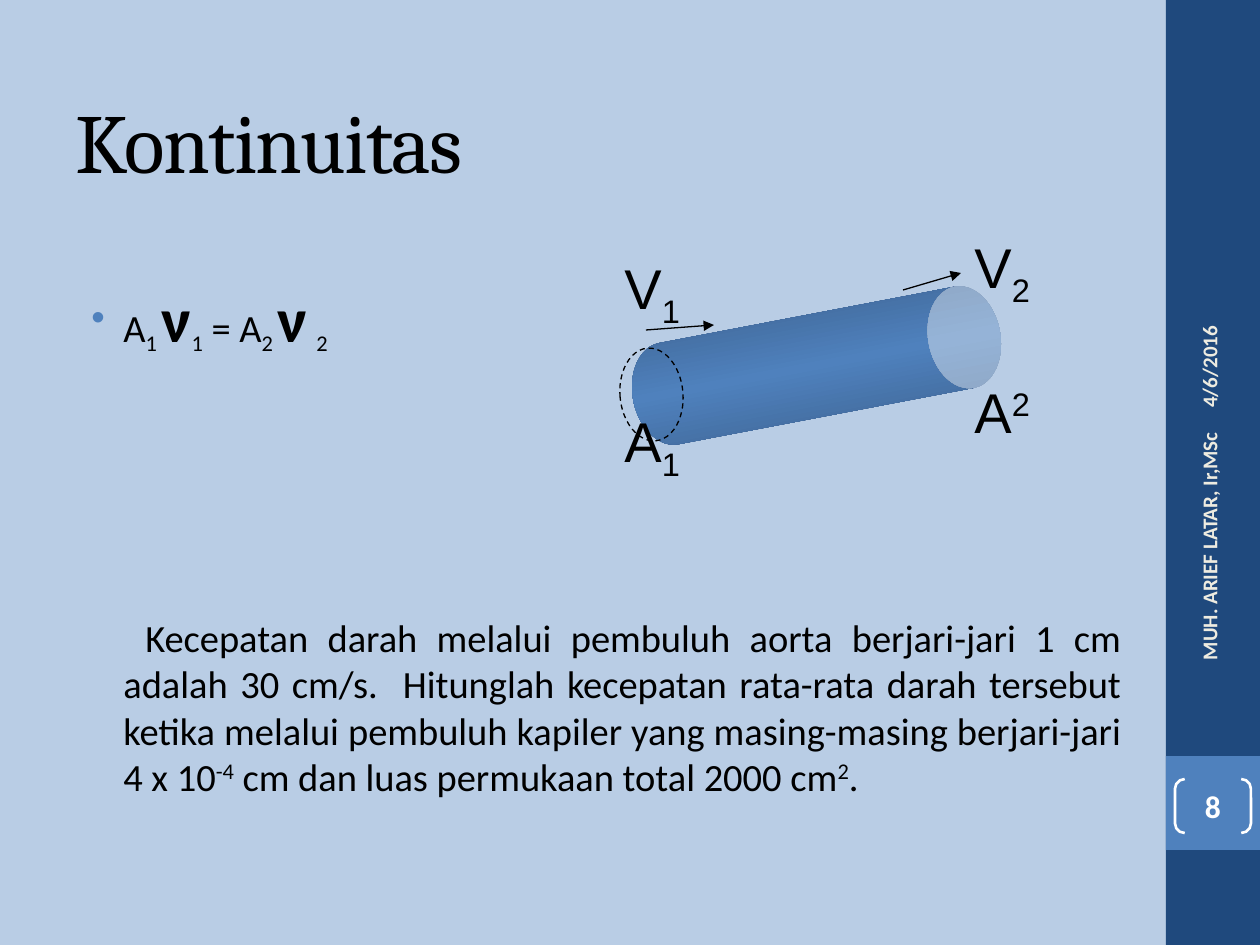
from copy import deepcopy
from lxml.etree import SubElement
from pptx import Presentation
from pptx.dml.color import RGBColor
from pptx.enum.dml import MSO_LINE
from pptx.enum.shapes import MSO_CONNECTOR, MSO_SHAPE
from pptx.enum.text import MSO_ANCHOR, PP_ALIGN
from pptx.oxml.ns import qn
from pptx.util import Pt

PX = 914400 / 126
HUES = {"back": "B9CDE5", "navy": "1F497D", "blue": "4F81BD", "shade": "395C87",
        "cream": "EEECE1", "white": "FFFFFF", "black": "000000"}
RGB = {name: RGBColor.from_string(hue) for name, hue in HUES.items()}


def place(*nums):
    return [round(n * PX) for n in nums]


def write(para, text, size, face="Calibri", hue="black", bold=False, base=0):
    run = para.add_run()
    run.text = text
    font = run.font
    font.size, font.name, font.bold = Pt(size), face, bold
    font.color.rgb = RGB[hue]
    if base:
        font._element.set("baseline", str(base * 1000))
    return run


deck = Presentation()
deck.slide_width, deck.slide_height = place(1260, 945)
slide = deck.slides.add_slide(deck.slide_layouts[5])
slide.background.fill.solid()
slide.background.fill.fore_color.rgb = RGB["back"]
shapes = slide.shapes

for top, high, hue in [(0, 945, "navy"), (756, 94, "blue")]:
    band = shapes.add_shape(MSO_SHAPE.RECTANGLE, *place(1166, top, 94, high))
    band.shadow.inherit = False
    band.fill.solid()
    band.fill.fore_color.rgb = RGB[hue]
    band.line.fill.background()

title = shapes.title
title.left, title.top, title.width, title.height = place(63, 84, 462, 111)
title.text_frame.vertical_anchor = MSO_ANCHOR.MIDDLE
para = title.text_frame.paragraphs[0]
para.alignment = PP_ALIGN.LEFT
run = write(para, "Kontinuitas", 48, "Cambria")
run.font._element.set("spc", "-100")

box = shapes.add_textbox(*place(63, 273, 500, 100))
box.text_frame.word_wrap = True
para = box.text_frame.paragraphs[0]
props = para._p.get_or_add_pPr()
left, hang = place(48, -32)
props.set("marL", str(left))
props.set("indent", str(hang))
SubElement(SubElement(props, qn("a:buClr")), qn("a:srgbClr"), val=HUES["blue"])
SubElement(props, qn("a:buFont"), typeface="Arial")
SubElement(props, qn("a:buChar"), char="•")
for text, size, bold, base in [
        ("A", 22, False, 0), ("1 ", 22, False, -25), ("ν", 36, True, 0),
        ("1", 22, False, -25), (" = A", 22, False, 0), ("2 ", 22, False, -25),
        ("ν", 36, True, 0), (" ", 22, False, 0), ("2", 22, False, -25)]:
    write(para, text, size, bold=bold, base=base)

box = shapes.add_textbox(*place(63, 608, 1071, 200))
box.text_frame.word_wrap = True
para = box.text_frame.paragraphs[0]
para.alignment = PP_ALIGN.JUSTIFY
props = para._p.get_or_add_pPr()
left, first = place(48, 22)
props.set("marL", str(left))
props.set("indent", str(first))
for text, base in [
        ("Kecepatan darah melalui pembuluh aorta berjari-jari 1 cm adalah 30 cm/s.  "
         "Hitunglah kecepatan rata-rata darah tersebut ketika melalui pembuluh kapiler "
         "yang masing-masing berjari-jari 4 x 10", 0),
        ("-4", 30), (" cm dan luas permukaan total 2000 cm", 0), ("2", 30), (".", 0)]:
    write(para, text, 22, base=base)

for text, x, y, wide, align in [
        ("4/6/2016", 1041, 227, 336, PP_ALIGN.LEFT),
        ("MUH. ARIEF LATAR, Ir,MSc", 1046, 558, 326, PP_ALIGN.RIGHT)]:
    box = shapes.add_textbox(*place(x, y, wide, 50))
    box.rotation = 270
    box.text_frame.word_wrap = True
    box.text_frame.vertical_anchor = MSO_ANCHOR.MIDDLE
    para = box.text_frame.paragraphs[0]
    para.alignment = align
    write(para, text, 12, hue="cream", bold=True)

page = shapes.add_shape(MSO_SHAPE.DOUBLE_BRACKET, *place(1175, 779, 76, 54))
page.shadow.inherit = False
page.adjustments[0] = 0.18
page.fill.background()
page.line.color.rgb = RGB["white"]
page.line.width = Pt(1.5)
frame = page.text_frame
frame.margin_left = frame.margin_right = frame.margin_top = frame.margin_bottom = 0
frame.vertical_anchor = MSO_ANCHOR.MIDDLE
para = frame.paragraphs[0]
para.alignment = PP_ALIGN.CENTER
write(para, "8", 18, hue="white", bold=True)

tube = shapes.add_shape(MSO_SHAPE.CAN, *place(765, 179, 103, 373))
tube.shadow.inherit = False
tube.rotation = 79.2
tube.adjustments[0] = 0.7
tube.line.fill.background()
tube.fill.gradient()
tube.fill.gradient_angle = 0
stops = tube._element.spPr.find(".//" + qn("a:gsLst"))
stops.append(deepcopy(stops[0]))
for stop, spot, hue in zip(tube.fill.gradient_stops, (0, 0.5, 1), ("shade", "blue", "shade")):
    stop.position = spot
    stop.color.rgb = RGB[hue]

ring = shapes.add_shape(MSO_SHAPE.OVAL, *place(620, 348, 63, 93))
ring.shadow.inherit = False
ring.rotation = 354.8
ring.fill.background()
ring.line.color.rgb = RGB["black"]
ring.line.width = Pt(0.75)
ring.line.dash_style = MSO_LINE.DASH

for text, digit, base, x, y in [
        ("V", "1", -25, 612, 247), ("A", "1", -25, 612, 400),
        ("V", "2", -25, 962, 226), ("A", "2", 30, 962, 371)]:
    box = shapes.add_textbox(*place(x, y, 110, 78))
    box.text_frame.word_wrap = True
    para = box.text_frame.paragraphs[0]
    write(para, text, 32, "Arial")
    write(para, digit, 32, "Arial", base=base)

for ends in [(646, 330, 714, 325), (903, 290, 961, 273)]:
    arrow = shapes.add_connector(MSO_CONNECTOR.STRAIGHT, *place(*ends))
    arrow.line.color.rgb = RGB["black"]
    arrow.line.width = Pt(0.75)
    props = arrow._element.spPr
    SubElement(props.find(qn("a:ln")), qn("a:tailEnd"), type="triangle")
    SubElement(props, qn("a:effectLst"))

deck.save("out.pptx")
